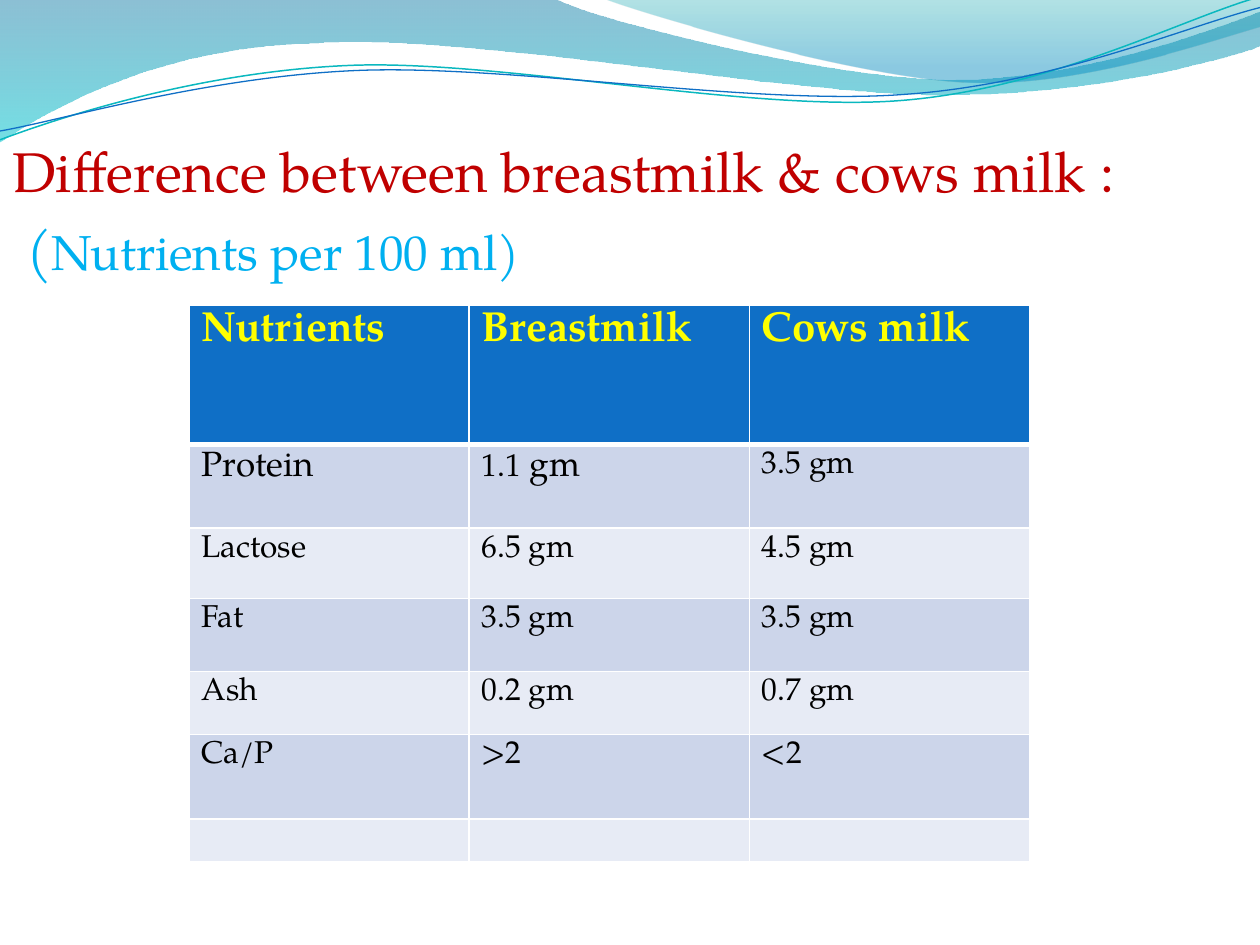
import pptx
import pptx.dml.color
import pptx.enum.text
import pptx.oxml.ns
import pptx.util
import lxml.etree

WIDTH, HEIGHT = 10, 7.5
FONT = "TeX Gyre Pagella"
COLORS = {
    "title": "C00000", "subtitle": "00B0F0", "header": "0F6FC6",
    "header_text": "FFFF00", "text": "000000", "border": "FFFFFF",
    "odd_row": "CCD5EA", "even_row": "E7EBF5",
    "deep_blue": "0074A1", "aqua": "00C6CF", "teal": "00A1A9",
    "sky": "008BBF", "teal_line": "0AB8BF", "blue_line": "0F6FC6",
}
ROW_HEIGHTS = [1.11, 0.66, 0.56, 0.58, 0.5, 0.67, 0.34]
NUTRIENTS = [
    ["Nutrients", "Breastmilk", "Cows milk"],
    ["Protein", "1.1 gm", "3.5 gm"],
    ["Lactose", "6.5 gm", "4.5 gm"],
    ["Fat", "3.5 gm", "3.5 gm"],
    ["Ash", "0.2 gm", "0.7 gm"],
    ["Ca/P", ">2", "<2"],
    ["", "", ""],
]


def rgb(name):
    return pptx.dml.color.RGBColor.from_string(COLORS[name])


def add_child(parent, tag, **attributes):
    child = lxml.etree.SubElement(parent, pptx.oxml.ns.qn(tag))
    for name, value in attributes.items():
        child.set(name, str(value))
    return child


def style_font(font, size, color, bold=False):
    font.name = FONT
    font.size = pptx.util.Pt(size)
    font.color.rgb = rgb(color)
    font.bold = bold


def to_emu(point):
    return tuple(int(pptx.util.Inches(length)) for length in point)


def add_outline(page, start, segments, close):
    builder = page.shapes.build_freeform(*to_emu(start), scale=1.0)
    builder.add_line_segments([to_emu(segment[-1]) for segment in segments], close=close)
    outline = builder.convert_to_shape()
    outline.shadow.inherit = False
    lines = list(outline._element.iter(pptx.oxml.ns.qn("a:lnTo")))
    for line, segment in zip(lines, segments):
        if len(segment) == 3:
            curve = add_child(line.getparent(), "a:cubicBezTo")
            for x, y in map(to_emu, segment):
                add_child(curve, "a:pt", x=x - outline.left, y=y - outline.top)
            line.getparent().replace(line, curve)
    return outline


def add_wave(page, start, segments, stops):
    wave = add_outline(page, start, segments, True)
    wave.line.fill.background()
    wave.fill.gradient()
    wave.fill.gradient_angle = 270
    for stop, (position, color, opacity) in zip(wave.fill.gradient_stops, stops):
        stop.position = position
        stop.color.rgb = rgb(color)
    tag = pptx.oxml.ns.qn("a:srgbClr")
    for element, (position, color, opacity) in zip(wave._element.spPr.iter(tag), stops):
        add_child(element, "a:alpha", val=opacity * 1000)


def add_wave_line(page, start, segments, color, width):
    outline = add_outline(page, start, segments, False)
    outline.fill.background()
    outline.line.color.rgb = rgb(color)
    outline.line.width = pptx.util.Pt(width)


def add_waves(page):
    add_wave(page, (0, 0), [
        ((4.4, -0.01),),
        ((4.76, 0.17), (6.64, 0.63), (7.58, 0.63)),
        ((8.53, 0.63), (9.58, 0.26), (10, 0.09)),
        ((10.01, 0.36),),
        ((9.83, 0.44), (8.7, 0.76), (7.46, 0.75)),
        ((6.22, 0.75), (3.82, 0.28), (2.57, 0.34)),
        ((1.29, 0.36), (0.46, 0.83), (-0.01, 1.13)),
    ], [(0, "deep_blue", 45), (1, "aqua", 55)])
    add_wave(page, (4.79, -0.01), [
        ((5.09, 0.11), (6.82, 0.62), (7.69, 0.65)),
        ((8.56, 0.69), (9.61, 0.32), (10, 0.21)),
        ((10, 0),),
    ], [(0, "teal", 30), (0.8, "sky", 45)])
    add_wave_line(page, (0, 1.11), [
        ((0.48, 0.93), (1.58, 0.57), (2.77, 0.52)),
        ((3.95, 0.47), (5.93, 0.89), (7.13, 0.8)),
        ((8.33, 0.71), (9.38, 0.15), (9.98, -0.02)),
    ], "teal_line", 0.85)
    add_wave_line(page, (0, 1.04), [
        ((0.47, 0.96), (1.64, 0.61), (2.83, 0.56)),
        ((4.03, 0.51), (5.97, 0.84), (7.17, 0.75)),
        ((8.36, 0.67), (9.41, 0.21), (10, 0.06)),
    ], "blue_line", 0.75)


def add_heading(para, spans, color, indent=0, space=0):
    para.space_before = pptx.util.Pt(space)
    properties = para._p.get_or_add_pPr()
    properties.set("marL", str(int(pptx.util.Inches(indent))))
    properties.set("indent", "0")
    add_child(properties, "a:buNone")
    for text, size in spans:
        span = para.add_run()
        span.text = text
        style_font(span.font, size, color)


def fill_body(page):
    body = page.placeholders[1]
    body.left = body.top = 0
    body.width, body.height = pptx.util.Inches(WIDTH), pptx.util.Inches(HEIGHT)
    frame = body.text_frame
    frame.auto_size = pptx.enum.text.MSO_AUTO_SIZE.NONE
    frame.margin_top = pptx.util.Inches(1.08)
    add_heading(frame.paragraphs[0],
                [("Difference between breastmilk & cows milk :", 32)], "title")
    add_heading(frame.add_paragraph(),
                [("(", 32), ("Nutrients per 100 ml)", 28)], "subtitle", 0.11, 6.4)
    page.shapes._spTree.append(body._element)


def add_borders(cell, widths):
    properties = cell._tc.get_or_add_tcPr()
    for side, width in widths.items():
        border = add_child(properties, "a:ln" + side, w=int(pptx.util.Pt(width)))
        add_child(add_child(border, "a:solidFill"), "a:srgbClr", val=COLORS["border"])


def fill_cell(cell, text, row, column):
    if row == 0:
        size, color, fill = 24, "header_text", "header"
    else:
        size, color = 20 if (row, column) == (1, 0) else 18, "text"
        fill = "odd_row" if row % 2 else "even_row"
    add_borders(cell, {"L": 1, "R": 1, "T": 3 if row == 1 else 1, "B": 1 if row else 3})
    cell.fill.solid()
    cell.fill.fore_color.rgb = rgb(fill)
    para = cell.text_frame.paragraphs[0]
    style_font(para.font, size, color, row == 0)
    if not text:
        cell.margin_top = cell.margin_bottom = 0
    elif (row, column) == (1, 1):
        number, unit = text.split()
        for part, part_size in ((number, 18), (" " + unit, 20)):
            span = para.add_run()
            span.text = part
            span.font.size = pptx.util.Pt(part_size)
    else:
        para.add_run().text = text


def add_nutrient_table(page):
    box = [pptx.util.Inches(length) for length in (1.5, 2.42, 6.67, sum(ROW_HEIGHTS))]
    table = page.shapes.add_table(len(NUTRIENTS), len(NUTRIENTS[0]), *box).table
    for row, (height, texts) in enumerate(zip(ROW_HEIGHTS, NUTRIENTS)):
        table.rows[row].height = pptx.util.Inches(height)
        for column, text in enumerate(texts):
            fill_cell(table.cell(row, column), text, row, column)


def main():
    deck = pptx.Presentation()
    deck.slide_width = pptx.util.Inches(WIDTH)
    deck.slide_height = pptx.util.Inches(HEIGHT)
    page = deck.slides.add_slide(deck.slide_layouts[1])
    title = page.shapes.title._element
    title.getparent().remove(title)
    add_waves(page)
    fill_body(page)
    add_nutrient_table(page)
    deck.save("out.pptx")


if __name__ == "__main__":
    main()
